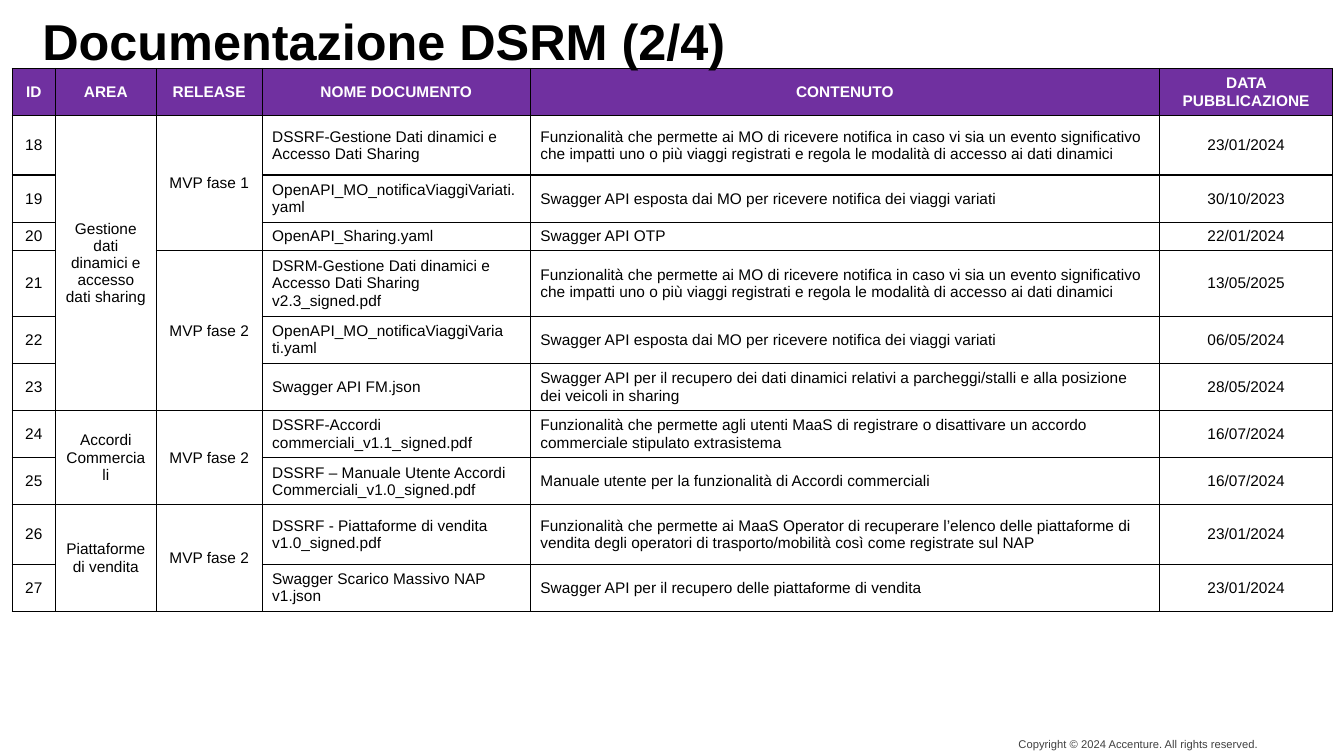
from lxml.etree import SubElement
from pptx import Presentation
from pptx.dml.color import RGBColor
from pptx.enum.text import MSO_ANCHOR, PP_ALIGN
from pptx.oxml.ns import qn
from pptx.util import Inches, Pt

BLACK = RGBColor(0x00, 0x00, 0x00)
GREY = RGBColor(0x40, 0x40, 0x40)
WHITE = RGBColor(0xFF, 0xFF, 0xFF)
PURPLE = RGBColor(0x70, 0x30, 0xA0)

HEADS = ["ID", "AREA", "RELEASE", "NOME DOCUMENTO", "CONTENUTO", "DATA PUBBLICAZIONE"]
WIDTHS = [0.43, 1, 1.05, 2.66, 6.24, 1.72]
HEIGHTS = [0.42, 0.59, 0.42, 0.26, 0.59, 0.42, 0.42, 0.42, 0.42, 0.59, 0.42]
FIRST_ID = 18

AREAS = [
    ("Gestione dati dinamici e accesso dati sharing", 6),
    ("Accordi Commerciali", 2),
    ("Piattaforme di vendita", 2),
]
PHASES = [("MVP fase 1", 3), ("MVP fase 2", 3), ("MVP fase 2", 2), ("MVP fase 2", 2)]

EVENTS = (
    "Funzionalità che permette ai MO di ricevere notifica in caso vi sia un evento "
    "significativo che impatti uno o più viaggi registrati e regola le modalità di "
    "accesso ai dati dinamici"
)
TRIPS = "Swagger API esposta dai MO per ricevere notifica dei viaggi variati"
DOCS = [
    ("DSSRF-Gestione Dati dinamici e Accesso Dati Sharing", EVENTS, "23/01/2024"),
    ("OpenAPI_MO_notificaViaggiVariati.yaml", TRIPS, "30/10/2023"),
    ("OpenAPI_Sharing.yaml", "Swagger API OTP", "22/01/2024"),
    ("DSRM-Gestione Dati dinamici e Accesso Dati Sharing v2.3_signed.pdf", EVENTS,
     "13/05/2025"),
    ("OpenAPI_MO_notificaViaggiVaria ti.yaml", TRIPS, "06/05/2024"),
    ("Swagger API FM.json",
     "Swagger API per il recupero dei dati dinamici relativi a parcheggi/stalli e alla "
     "posizione dei veicoli in sharing", "28/05/2024"),
    ("DSSRF-Accordi commerciali_v1.1_signed.pdf",
     "Funzionalità che permette agli utenti MaaS di registrare o disattivare un accordo "
     "commerciale stipulato extrasistema", "16/07/2024"),
    ("DSSRF – Manuale Utente Accordi Commerciali_v1.0_signed.pdf",
     "Manuale utente per la funzionalità di Accordi commerciali", "16/07/2024"),
    ("DSSRF - Piattaforme di vendita v1.0_signed.pdf",
     "Funzionalità che permette ai MaaS Operator di recuperare l’elenco delle piattaforme "
     "di vendita degli operatori di trasporto/mobilità così come registrate sul NAP",
     "23/01/2024"),
    ("Swagger Scarico Massivo NAP v1.json",
     "Swagger API per il recupero delle piattaforme di vendita", "23/01/2024"),
]


class Page:
    """Draws text and tables on one slide in a shared style."""

    font = "Arial"
    cell_size = 11

    def __init__(self, slide):
        self.slide = slide

    def add_run(self, para, text, size, color, bold=False, align=PP_ALIGN.LEFT):
        para.alignment = align
        run = para.add_run()
        run.text = text
        run.font.name = self.font
        run.font.size = Pt(size)
        run.font.bold = bold
        run.font.color.rgb = color

    def text(self, box, text, size, color, bold=False, align=PP_ALIGN.LEFT,
             anchor=MSO_ANCHOR.TOP, top=0):
        frame = self.slide.shapes.add_textbox(*map(Inches, box)).text_frame
        frame.word_wrap = True
        frame.vertical_anchor = anchor
        frame.margin_left = frame.margin_right = frame.margin_bottom = 0
        frame.margin_top = Inches(top)
        para = frame.paragraphs[0]
        para.space_after = Pt(12)
        self.add_run(para, text, size, color, bold, align)

    def border(self, cell):
        props = cell._tc.get_or_add_tcPr()
        for side in ("a:lnL", "a:lnR", "a:lnT", "a:lnB"):
            line = SubElement(props, qn(side), w=str(Pt(1)))
            fill = SubElement(line, qn("a:solidFill"))
            SubElement(fill, qn("a:srgbClr"), val=str(BLACK))

    def grid(self, left, top, widths, heights):
        frame = self.slide.shapes.add_table(
            len(heights), len(widths), Inches(left), Inches(top),
            Inches(sum(widths)), Inches(sum(heights)))
        table = frame.table
        table.horz_banding = False
        for col, width in zip(table.columns, widths):
            col.width = Inches(width)
        for row, height in zip(table.rows, heights):
            row.height = Inches(height)
        for cell in table.iter_cells():
            self.border(cell)
            cell.fill.solid()
            cell.fill.fore_color.rgb = WHITE
            cell.vertical_anchor = MSO_ANCHOR.MIDDLE
            end = cell.text_frame.paragraphs[0]._p.get_or_add_endParaRPr()
            end.set("sz", str(self.cell_size * 100))
        return table

    def cell(self, cell, text, align=PP_ALIGN.CENTER, color=BLACK, bold=False):
        para = cell.text_frame.paragraphs[0]
        self.add_run(para, text, self.cell_size, color, bold, align)

    def head(self, table, labels):
        for col, label in enumerate(labels):
            cell = table.cell(0, col)
            cell.fill.fore_color.rgb = PURPLE
            self.cell(cell, label, color=WHITE, bold=True)

    def spans(self, table, col, groups):
        row = 1
        for label, count in groups:
            cell = table.cell(row, col)
            cell.merge(table.cell(row + count - 1, col))
            self.cell(cell, label)
            row += count


def main():
    deck = Presentation()
    deck.slide_width = Inches(13.33)
    deck.slide_height = Inches(7.5)
    page = Page(deck.slides.add_slide(deck.slide_layouts[6]))

    page.text((9.68, 7.27, 2.8, 0.22), "Copyright © 2024 Accenture. All rights reserved.",
              8, GREY, align=PP_ALIGN.RIGHT, anchor=MSO_ANCHOR.MIDDLE)

    table = page.grid(0.12, 0.68, WIDTHS, HEIGHTS)
    page.head(table, HEADS)
    page.spans(table, 1, AREAS)
    page.spans(table, 2, PHASES)
    for row, (name, content, date) in enumerate(DOCS, 1):
        page.cell(table.cell(row, 0), str(FIRST_ID + row - 1))
        page.cell(table.cell(row, 3), name, PP_ALIGN.LEFT)
        page.cell(table.cell(row, 4), content, PP_ALIGN.LEFT)
        page.cell(table.cell(row, 5), date)

    page.text((0.42, 0.05, 12.5, 0.73), "Documentazione DSRM (2/4)", 36, BLACK,
              bold=True, top=0.05)
    deck.save("out.pptx")


if __name__ == "__main__":
    main()
